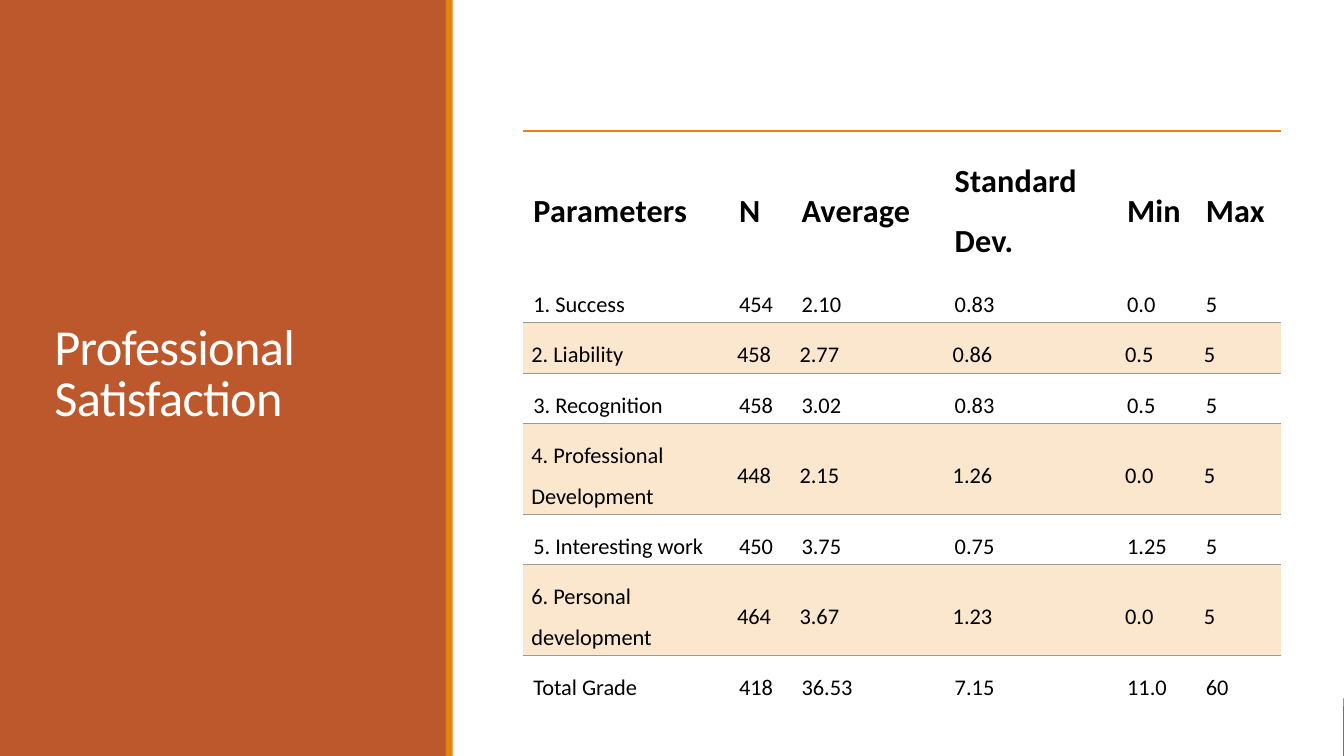
"""Build the Professional Satisfaction slide with its table of parameters."""
from dataclasses import dataclass

from lxml.etree import SubElement
from pptx import Presentation
from pptx.dml.color import RGBColor as RGB
from pptx.enum.shapes import MSO_SHAPE as Shape
from pptx.enum.text import MSO_ANCHOR as Anchor
from pptx.oxml.ns import qn
from pptx.util import Inches, Pt


@dataclass(frozen=True)
class Theme:
    font: str = "Calibri"
    rust: str = "BD582C"
    orange: str = "E48312"
    band: str = "FBE6CE"
    rule: str = "999999"
    white: str = "FFFFFF"
    black: str = "000000"
    title_size: int = 36
    header_size: int = 23
    body_size: int = 16


theme = Theme()
NO_STYLE = "{2D5ABB26-0587-4C30-8999-92F81FD0307C}"


def style_text(paragraph, size, color, line_spacing, tracking=0, bold=False):
    font = paragraph.font
    font.name, font.size, font.bold = theme.font, Pt(size), bold
    font.color.rgb = RGB.from_string(color)
    paragraph.line_spacing = line_spacing
    for run in paragraph.runs:
        run._r.get_or_add_rPr().set("spc", str(tracking))


def add_top_border(cell, color, width):
    line = SubElement(cell._tc.get_or_add_tcPr(), qn("a:lnT"), w=str(Pt(width)))
    fill = SubElement(line, qn("a:solidFill"))
    SubElement(fill, qn("a:srgbClr"), val=color)


prs = Presentation()
prs.slide_width, prs.slide_height = Inches(13.33), Inches(7.5)
slide = prs.slides.add_slide(prs.slide_layouts[6])

panels = [
    (0, 7, 13.33, 0.5, theme.rust),
    (0, 6.93, 13.33, 0.07, theme.orange),
    (0, 0, 13.32, 7.5, theme.white),
    (0, 0, 4.43, 7.5, theme.rust),
    (4.42, 0, 0.07, 7.5, theme.orange),
]
for *place, color in panels:
    panel = slide.shapes.add_shape(Shape.RECTANGLE, *map(Inches, place))
    panel.shadow.inherit = False
    panel.fill.solid()
    panel.fill.fore_color.rgb = RGB.from_string(color)
    panel.line.fill.background()

title = slide.shapes.add_textbox(
    Inches(0.54), Inches(0.57), Inches(3.37), Inches(6.31)).text_frame
title.word_wrap = True
title.vertical_anchor = Anchor.MIDDLE
title.margin_left = title.margin_right = title.margin_top = title.margin_bottom = 0
title.text = "Professional Satisfaction"
style_text(title.paragraphs[0], theme.title_size, theme.white, 0.85, tracking=-50)

results = [
    ("Parameters", "N", "Average", "Standard Dev.", "Min", "Max"),
    ("1. Success", "454", "2.10", "0.83", "0.0", "5"),
    ("2. Liability", "458", "2.77", "0.86", "0.5", "5"),
    ("3. Recognition", "458", "3.02", "0.83", "0.5", "5"),
    ("4. Professional Development", "448", "2.15", "1.26", "0.0", "5"),
    ("5. Interesting work", "450", "3.75", "0.75", "1.25", "5"),
    ("6. Personal development", "464", "3.67", "1.23", "0.0", "5"),
    ("Total Grade", "418", "36.53", "7.15", "11.0", "60"),
]
column_widths = [2.04, 0.62, 1.52, 1.71, 0.78, 0.85]
row_heights = [1.4, 0.43, 0.43, 0.43, 0.87, 0.43, 0.87, 0.43]

table = slide.shapes.add_table(
    len(results), len(column_widths),
    Inches(5.19), Inches(1.3), Inches(7.52), Inches(5.32)).table
table.first_row = table.horz_banding = False
table._tbl.tblPr.find(qn("a:tableStyleId")).text = NO_STYLE
for column, width in zip(table.columns, column_widths):
    column.width = Inches(width)
for row, height in zip(table.rows, row_heights):
    row.height = Inches(height)

for row_index, values in enumerate(results):
    is_header = row_index == 0
    is_banded = row_index % 2 == 0 and not is_header
    for column_index, value in enumerate(values):
        cell = table.cell(row_index, column_index)
        cell.text = value
        cell.vertical_anchor = Anchor.MIDDLE
        cell.margin_left = Inches(0.08 if is_banded else 0.1)
        cell.margin_right = Inches(0.02 if is_header else 0.01)
        cell.margin_top = cell.margin_bottom = Inches(0.05)
        if is_header:
            add_top_border(cell, theme.orange, 1.5)
        if is_banded:
            add_top_border(cell, theme.rule, 0.75)
            cell.fill.solid()
            cell.fill.fore_color.rgb = RGB.from_string(theme.band)
        else:
            cell.fill.background()
        paragraph = cell.text_frame.paragraphs[0]
        paragraph.space_after = Pt(10)
        style_text(paragraph, theme.header_size if is_header else theme.body_size,
                   theme.black, 1.5, tracking=10 if is_header else 0, bold=is_header)

prs.save("out.pptx")
